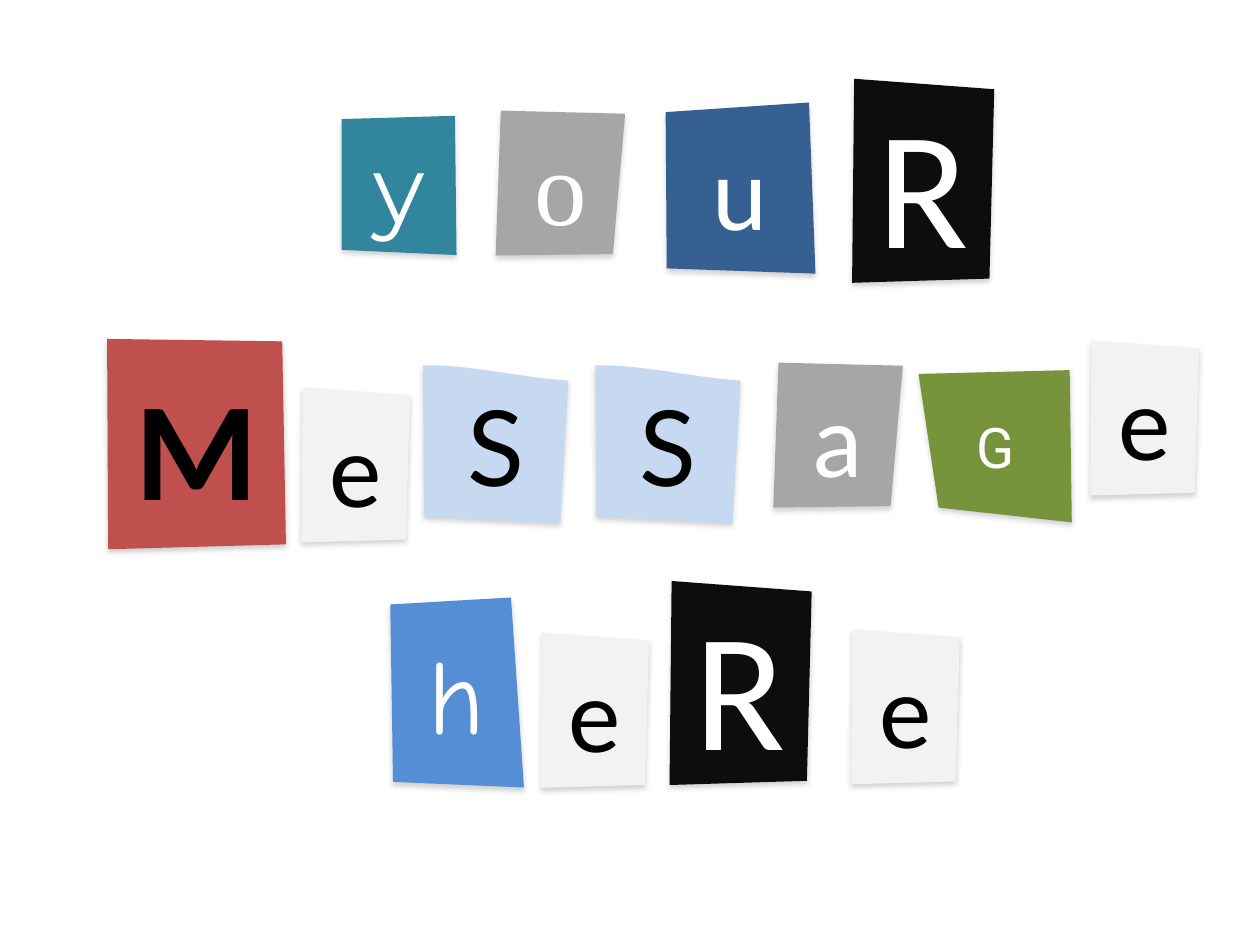
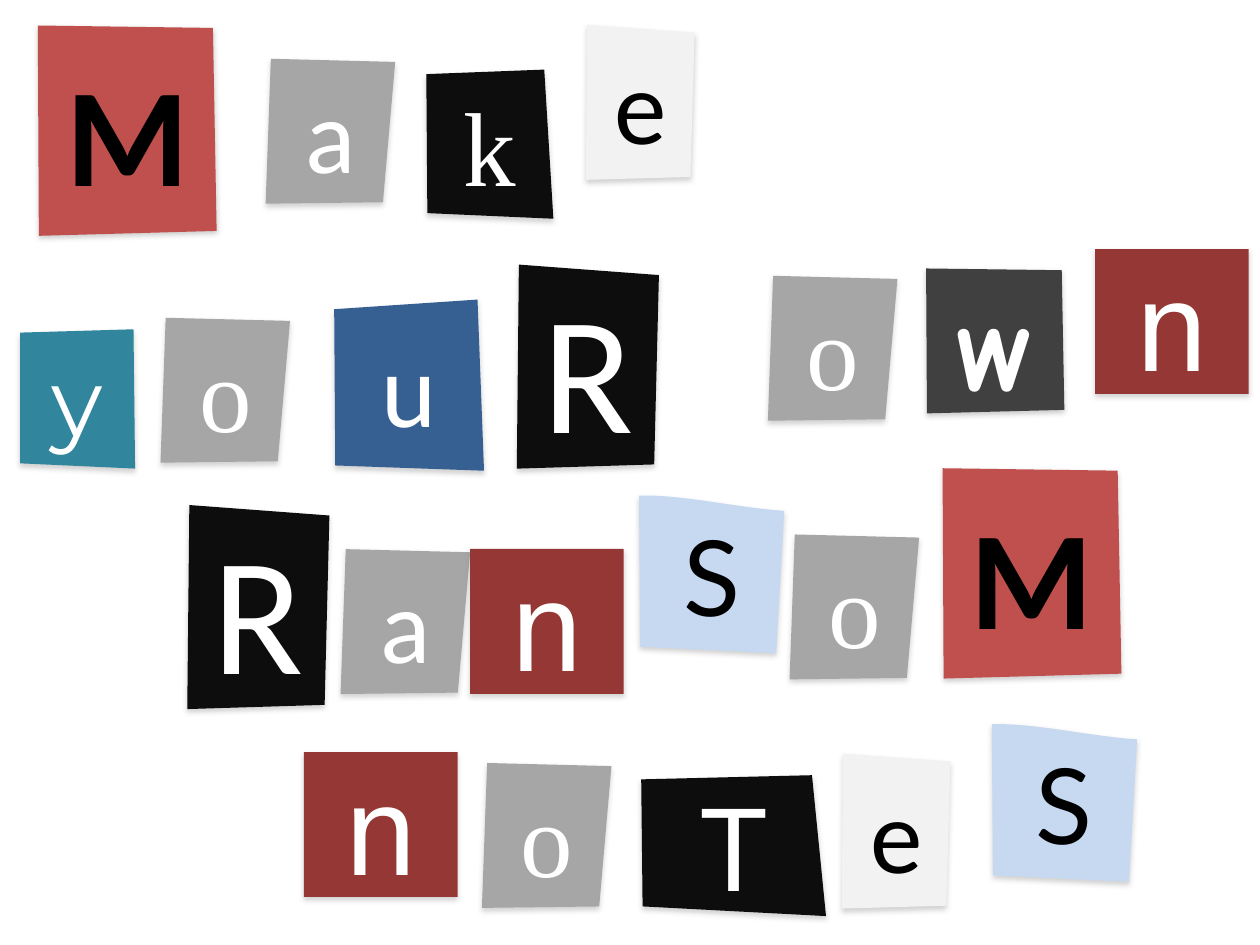
import pptx
import pptx.dml.color
import pptx.enum.shapes
import pptx.enum.text
import pptx.oxml
import pptx.oxml.ns
import pptx.util
from dataclasses import dataclass
from typing import NamedTuple

Pt = pptx.util.Pt
RGBColor = pptx.dml.color.RGBColor
Point = tuple[float, float]

# Colours
WHITE = RGBColor(0xFF, 0xFF, 0xFF)
BLACK = RGBColor(0x00, 0x00, 0x00)
INK = RGBColor(0x0D, 0x0D, 0x0D)
CHARCOAL = RGBColor(0x40, 0x40, 0x40)
GREY = RGBColor(0xA6, 0xA6, 0xA6)
PALE_GREY = RGBColor(0xF2, 0xF2, 0xF2)
SHADOW_GREY = RGBColor(0x80, 0x80, 0x80)
RED = RGBColor(0xC0, 0x50, 0x4D)
MAROON = RGBColor(0x95, 0x37, 0x35)
TEAL = RGBColor(0x31, 0x85, 0x9C)
NAVY = RGBColor(0x37, 0x60, 0x92)
BLUE = RGBColor(0x55, 0x8E, 0xD5)
PALE_BLUE = RGBColor(0xC6, 0xD9, 0xF1)
GREEN = RGBColor(0x77, 0x93, 0x3C)


class Shadow(NamedTuple):
    opacity: int
    distance: float


SOFT = Shadow(35, 1.8)
FIRM = Shadow(38, 1.6)
SHADOW_BLUR = 3.1


@dataclass(frozen=True)
class Clipping:
    """A scrap of paper: outline in points from its top left corner."""
    outline: list[Point]
    fill: RGBColor
    font: str
    size: float
    color: RGBColor = WHITE
    bold: bool = False
    border: bool = False
    shadow: Shadow = SOFT


class Tile(NamedTuple):
    letter: str
    x: float
    y: float


def curve(p0: Point, p1: Point, p2: Point, p3: Point, steps: int = 16) -> list[Point]:
    """Points along a cubic curve, end included."""
    pts = []
    for i in range(1, steps + 1):
        t = i / steps
        weights = ((1 - t) ** 3, 3 * t * (1 - t) ** 2, 3 * t * t * (1 - t), t ** 3)
        pts.append(tuple(sum(w * p[axis] for w, p in zip(weights, (p0, p1, p2, p3)))
                         for axis in (0, 1)))
    return pts


# Outlines shared by several letters, or with a curved edge
SLANTED = [(3, 0), (0, 82.8), (67, 82), (74, 1.8)]
WAVY = [(0, 0.3), (0.6, 86.6), (78.4, 90.3), (83, 8.9),
        *curve((83, 8.9), (57.8, 7.5), (23.9, -0.7), (0, 0.3))]
RECTANGLE = [(0, 0), (0, 82.8), (87.8, 82.8), (87.8, 0)]

# One clipping for each letter
CLIPPINGS: dict[str, Clipping] = {
    "M": Clipping([(0, 0), (0.6, 120.2), (102.2, 117.4), (100.1, 1.4)],
                  RED, "Calibri", 80, BLACK, bold=True, shadow=FIRM),
    "a": Clipping(SLANTED, GREY, "Calibri", 60),
    "o": Clipping(SLANTED, GREY, "Times New Roman", 60),
    "e": Clipping([(0.7, 0), (0, 87.8), (59, 86.2), (61.4, 4.4)],
                  PALE_GREY, "Calibri", 60, BLACK, border=True),
    "y": Clipping([(0, 1.9), (0, 76.6), (65.7, 79.6), (64.8, 0)],
                  TEAL, "Montserrat", 54),
    "u": Clipping([(0, 5.5), (0.6, 94.8), (85.6, 97.8), (81.9, 0)],
                  NAVY, "Calibri", 60),
    "R": Clipping([(1.2, 0), (0, 116.6), (78.5, 114.2), (81.2, 6)],
                  INK, "Calibri", 96),
    "S": Clipping(WAVY, PALE_BLUE, "Lato", 60, BLACK),
    "G": Clipping([(0, 2.2), (11.5, 78.6), (87.6, 87), (86.4, 0)],
                  GREEN, "Roboto", 32),
    "h": Clipping([(0, 4), (1.6, 105.4), (76.4, 108.6), (69, 0)],
                  BLUE, "Comic Neue", 60),
    "k": Clipping([(0, 2.6), (0.6, 82), (72.6, 85.2), (67.4, 0)],
                  INK, "Times New Roman", 60),
    "w": Clipping([(0, 0), (0.5, 82.8), (79, 80.8), (77.5, 1)],
                  CHARCOAL, "Comic Neue", 72, bold=True, shadow=FIRM),
    "n": Clipping(RECTANGLE, MAROON, "Courier New", 72),
    "T": Clipping([(0, 2.4), (0.8, 75), (105.6, 80.5), (97.6, 0)],
                  INK, "Roboto", 66),
}

# Each slide is a list of words
YOUR_MESSAGE_HERE = [
    [Tile("y", 195.2, 66.2), Tile("o", 283.2, 63.2),
     Tile("u", 380.4, 58.6), Tile("R", 486.9, 45)],
    [Tile("M", 61.2, 193.7), Tile("e", 172.6, 221.8), Tile("S", 241.8, 208.6),
     Tile("S", 340.2, 208.6), Tile("a", 441.9, 207.2), Tile("G", 524.9, 211.5),
     Tile("e", 623.4, 195)],
    [Tile("h", 223, 341.4), Tile("e", 309.2, 362),
     Tile("R", 382.6, 332), Tile("e", 486.7, 360)],
]
MAKE_YOUR_OWN = [
    [Tile("M", 21.6, 14.6), Tile("a", 151.8, 33.6),
     Tile("k", 243.6, 39.8), Tile("e", 335.2, 14.6)],
    [Tile("y", 11.5, 188.2), Tile("o", 91.7, 181.6),
     Tile("u", 191, 171.2), Tile("R", 295.3, 151.2)],
    [Tile("o", 438.8, 157.6), Tile("w", 529.2, 153.4), Tile("n", 625.8, 142.3)],
    [Tile("R", 107, 288.6), Tile("a", 194.6, 313.8), Tile("n", 268.6, 313.7),
     Tile("S", 365.2, 283), Tile("o", 451.2, 305.4), Tile("M", 538.6, 267.6)],
    [Tile("n", 173.7, 429.8), Tile("o", 275.4, 436), Tile("T", 366.4, 443),
     Tile("e", 481.4, 431), Tile("S", 566.8, 413.6)],
]


def add_paper(slide: pptx.slide.Slide, outline: list[Point], x: float, y: float):
    """Draw the bare outline with its corner at x, y."""
    if outline is RECTANGLE:
        width, height = outline[2]
        return slide.shapes.add_shape(pptx.enum.shapes.MSO_SHAPE.RECTANGLE,
                                      Pt(x), Pt(y), Pt(width), Pt(height))
    start, *rest = [(Pt(px), Pt(py)) for px, py in outline]
    builder = slide.shapes.build_freeform(*start)
    builder.add_line_segments(rest, close=True)
    return builder.convert_to_shape(Pt(x), Pt(y))


def add_shadow(sp: pptx.shapes.autoshape.Shape, shadow: Shadow) -> None:
    sp.shadow.inherit = False
    effects = sp._element.spPr.find(pptx.oxml.ns.qn("a:effectLst"))
    effects.append(pptx.oxml.parse_xml(
        f'<a:outerShdw {pptx.oxml.ns.nsdecls("a")} blurRad="{Pt(SHADOW_BLUR)}" '
        f'dist="{Pt(shadow.distance)}" dir="5400000" rotWithShape="0">'
        f'<a:srgbClr val="{SHADOW_GREY}"><a:alpha val="{shadow.opacity * 1000}"/>'
        '</a:srgbClr></a:outerShdw>'))


def add_tile(slide: pptx.slide.Slide, tile: Tile) -> None:
    clip = CLIPPINGS[tile.letter]
    sp = add_paper(slide, clip.outline, tile.x, tile.y)
    sp.fill.solid()
    sp.fill.fore_color.rgb = clip.fill
    if clip.border:
        sp.line.color.rgb = clip.fill
        sp.line.width = Pt(0.75)
    else:
        sp.line.fill.background()
    add_shadow(sp, clip.shadow)

    # Letter
    tf = sp.text_frame
    tf.word_wrap = True
    tf.vertical_anchor = pptx.enum.text.MSO_ANCHOR.MIDDLE
    p = tf.paragraphs[0]
    p.alignment = pptx.enum.text.PP_ALIGN.CENTER
    r = p.add_run()
    r.text = tile.letter
    r.font.name = clip.font
    r.font.size = Pt(clip.size)
    r.font.bold = clip.bold
    r.font.color.rgb = clip.color


def main() -> None:
    prs = pptx.Presentation()
    prs.slide_width, prs.slide_height = Pt(720), Pt(540)
    for words in (YOUR_MESSAGE_HERE, MAKE_YOUR_OWN):
        slide = prs.slides.add_slide(prs.slide_layouts[6])
        for word in words:
            for tile in word:
                add_tile(slide, tile)
    prs.save("out.pptx")


if __name__ == "__main__":
    main()
